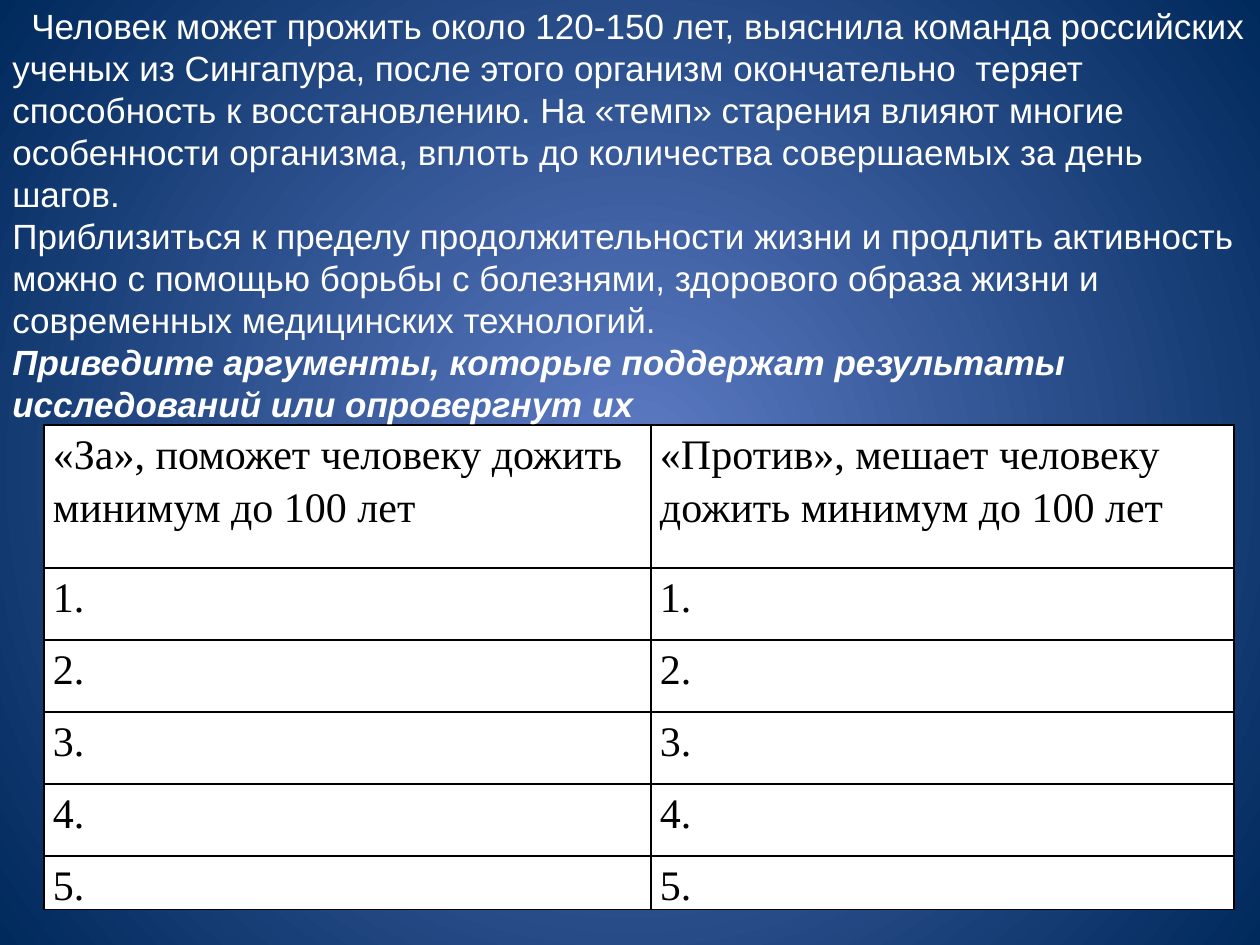
from lxml.etree import SubElement as Sub
from pptx import Presentation
from pptx.dml.color import RGBColor
from pptx.enum.text import MSO_ANCHOR as Anchor
from pptx.oxml import parse_xml
from pptx.oxml.ns import nsdecls, qn
from pptx.util import Pt

PX = 914400 // 126

# Content
INTRO = [
    "Человек может прожить около 120-150 лет, выяснила команда российских "
    "ученых из Сингапура, после этого организм окончательно  теряет "
    "способность к восстановлению. На «темп» старения влияют многие "
    "особенности организма, вплоть до количества совершаемых за день шагов.",
    "Приблизиться к пределу продолжительности жизни и продлить активность "
    "можно с помощью борьбы с болезнями, здорового образа жизни и "
    "современных медицинских технологий.",
]
TASK = ("Приведите аргументы, которые поддержат результаты "
        "исследований или опровергнут их")
HEADS = ["«За», поможет человеку дожить минимум до 100 лет",
         "«Против», мешает человеку дожить минимум до 100 лет"]
ROWS = [HEADS] + [[f"{n}."] * 2 for n in range(1, 6)]
WIDTHS = [607, 583]
HEIGHTS = [143] + [72] * 4 + [53]
GLOW = ["5E7CC5", "00295C"]


def px(n):
    return n * PX


def rgb(code):
    return RGBColor.from_string(code)


def style(para, face, size, color):
    font = para.font
    font.name, font.size = face, Pt(size)
    font.color.rgb = rgb(color)


def border(cell, color):
    props = cell._tc.get_or_add_tcPr()
    for i, side in enumerate(("lnL", "lnR", "lnT", "lnB")):
        line = props.makeelement(qn(f"a:{side}"), {"w": str(Pt(1))})
        fill = Sub(line, qn("a:solidFill"))
        Sub(fill, qn("a:srgbClr"), val=color)
        props.insert(i, line)


deck = Presentation()
deck.slide_width, deck.slide_height = px(1260), px(945)
slide = deck.slides.add_slide(deck.slide_layouts[6])

# Background: glow from the centre
back = slide.background.fill
back.gradient()
for stop, code in zip(back.gradient_stops, GLOW):
    stop.color.rgb = rgb(code)
lin = next(slide.element.iter(qn("a:lin")))
lin.getparent().replace(lin, parse_xml(
    f'<a:path {nsdecls("a")} path="circle">'
    '<a:fillToRect l="50000" t="50000" r="50000" b="50000"/></a:path>'))

# Table of arguments
grid = slide.shapes.add_table(
    len(ROWS), len(WIDTHS), px(44), px(425),
    px(sum(WIDTHS)), px(sum(HEIGHTS))).table
for col, width in zip(grid.columns, WIDTHS):
    col.width = px(width)
for row, height, texts in zip(grid.rows, HEIGHTS, ROWS):
    row.height = px(height)
    for cell, text in zip(row.cells, texts):
        cell.text = text
        cell.margin_left = cell.margin_right = px(9)
        cell.margin_top = cell.margin_bottom = 0
        cell.fill.solid()
        cell.fill.fore_color.rgb = rgb("FFFFFF")
        border(cell, "000000")
        para = cell.text_frame.paragraphs[0]
        para.line_spacing = 1.15
        style(para, "Times New Roman", 24, "000000")
        para.font.bold = False

# Introduction and task
box = slide.shapes.add_textbox(0, px(-4), px(1260), px(437))
frame = box.text_frame
frame.word_wrap = True
frame.vertical_anchor = Anchor.MIDDLE
frame.text = "\n".join(INTRO + [TASK])
for para in frame.paragraphs:
    style(para, "Arial", 20, "FFFFFF")
frame.paragraphs[0]._p.get_or_add_pPr().set("indent", str(px(19)))
last = frame.paragraphs[-1].font
last.bold = last.italic = True

deck.save("out.pptx")
